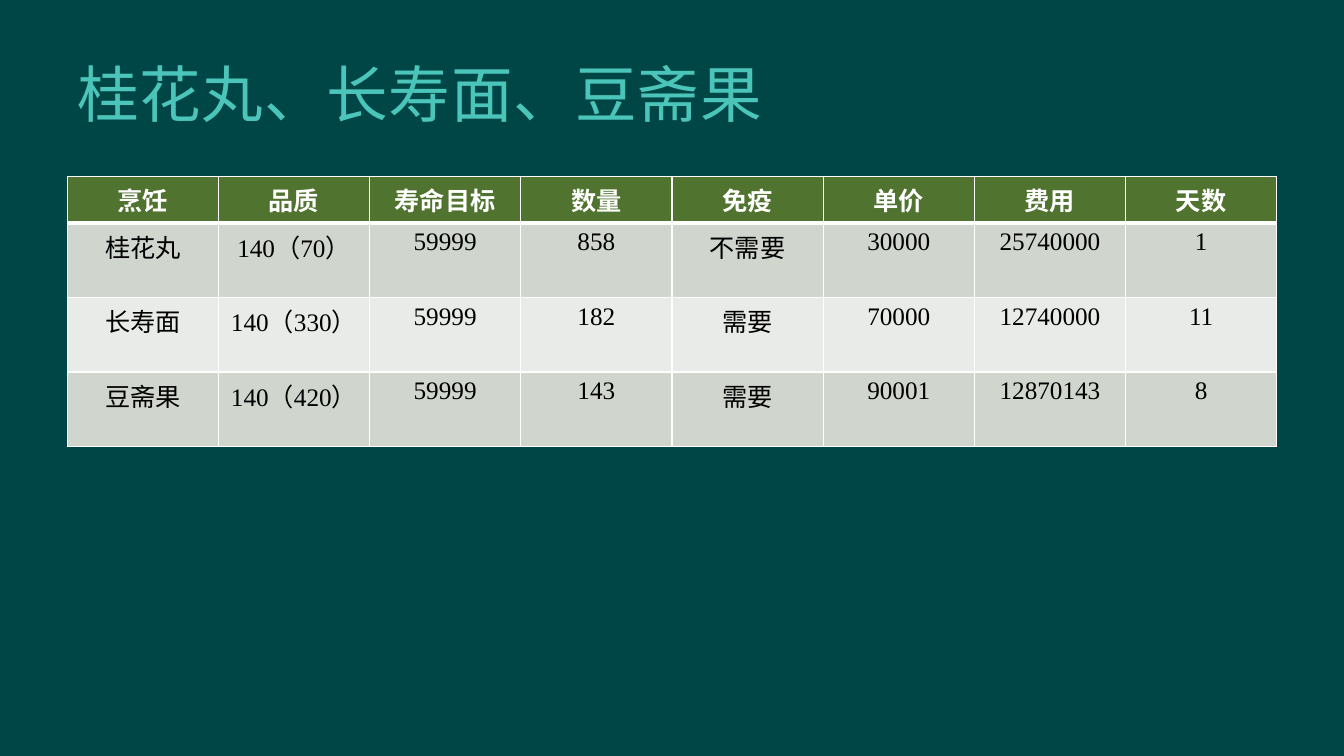
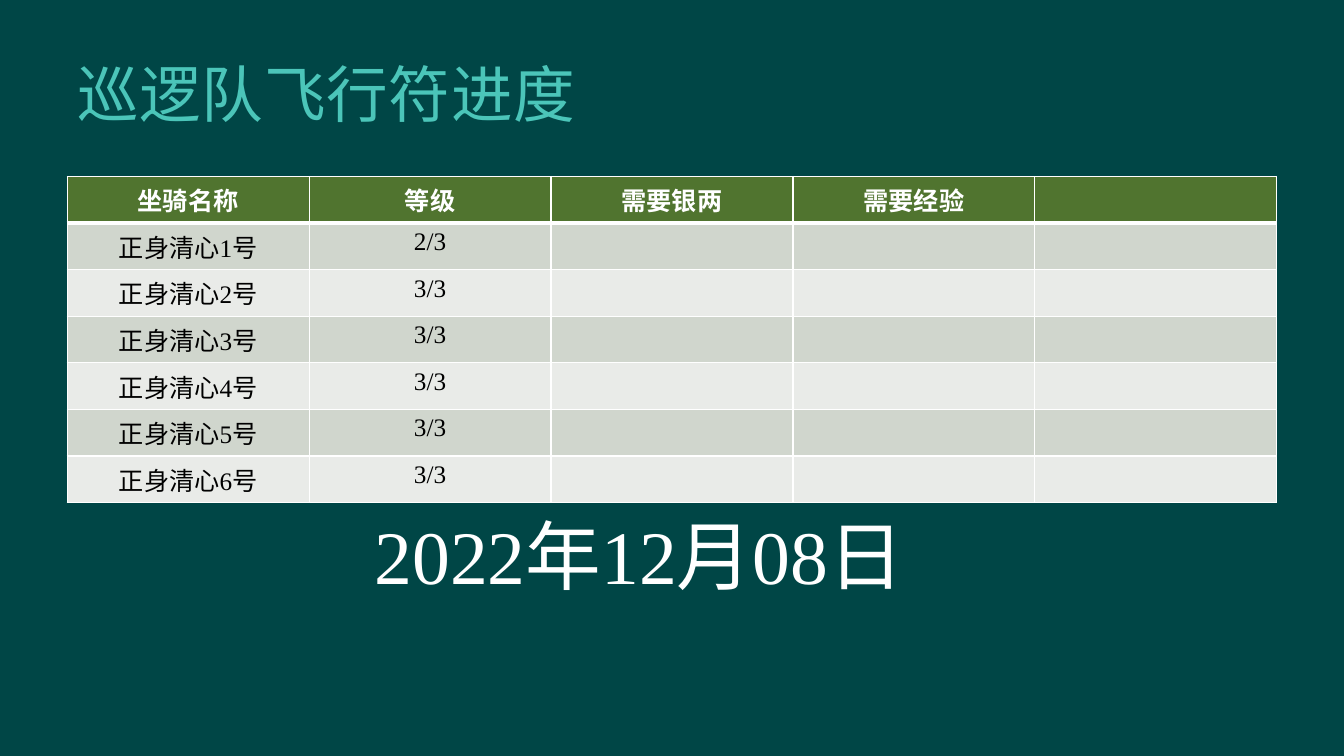
from lxml import etree
from pptx import Presentation
from pptx.dml.color import RGBColor
from pptx.enum import text
from pptx.oxml import ns
from pptx.util import Pt

BACKGROUND = "004646"
TITLE = "4BC5B9"
HEADER = "50742F"
BANDS = ["D0D6CD", "E9EBE8"]
WHITE = "FFFFFF"
BLACK = "000000"
LEFT = 48
TABLE_TOP = 126
TABLE_WIDTH = 864
ROW_HEIGHT = 29.2


def paint(target, color):
    if hasattr(target, "solid"):
        target.solid()
        target = target.fore_color
    target.rgb = RGBColor.from_string(color)


def add_border(cell, side, width):
    line = etree.Element(ns.qn(f"a:{side}"), w=str(Pt(width)))
    solid = etree.SubElement(line, ns.qn("a:solidFill"))
    etree.SubElement(solid, ns.qn("a:srgbClr"), val=WHITE)
    properties = cell._tc.get_or_add_tcPr()
    properties.insert(len(properties.findall("*")) - 1, line)


pages = [
    ("桂花丸、长寿面、豆斋果", [
        ["烹饪", "品质", "寿命目标", "数量", "免疫", "单价", "费用", "天数"],
        ["桂花丸", "140（70）", "59999", "858", "不需要", "30000", "25740000", "1"],
        ["长寿面", "140（330）", "59999", "182", "需要", "70000", "12740000", "11"],
        ["豆斋果", "140（420）", "59999", "143", "需要", "90001", "12870143", "8"],
    ]),
    ("巡逻队飞行符进度", [
        ["坐骑名称", "等级", "需要银两", "需要经验", ""],
        *[[f"正身清心{number}号", "2/3" if number == 1 else "3/3", "", "", ""]
          for number in range(1, 7)],
    ]),
]

presentation = Presentation()
presentation.slide_width = Pt(960)
presentation.slide_height = Pt(540)
paint(presentation.slide_master.background.fill, BACKGROUND)

for heading, rows in pages:
    slide = presentation.slides.add_slide(presentation.slide_layouts[5])
    title = slide.shapes.title
    title.left, title.top, title.width, title.height = Pt(LEFT), Pt(21.6), Pt(816.5), Pt(90)
    title.text_frame.text = heading
    title.text_frame.auto_size = text.MSO_AUTO_SIZE.NONE
    title.text_frame.vertical_anchor = text.MSO_ANCHOR.MIDDLE
    paragraph = title.text_frame.paragraphs[0]
    paragraph.alignment = text.PP_ALIGN.LEFT
    run = paragraph.runs[0]
    run.font.name = "Lato"
    run.font.size = Pt(44)
    paint(run.font.color, TITLE)
    run.font._element.set("spc", "50")

    table = slide.shapes.add_table(
        len(rows), len(rows[0]), Pt(LEFT), Pt(TABLE_TOP),
        Pt(TABLE_WIDTH), Pt(ROW_HEIGHT * len(rows))).table
    for row_index, row in enumerate(rows):
        is_header = row_index == 0
        for column_index, value in enumerate(row):
            cell = table.cell(row_index, column_index)
            paint(cell.fill, HEADER if is_header else BANDS[(row_index - 1) % 2])
            for side in ("lnL", "lnR", "lnT", "lnB"):
                thick = (side == "lnB" and is_header) or (side == "lnT" and row_index == 1)
                add_border(cell, side, 3 if thick else 1)
            cell.text_frame.text = value
            paragraph = cell.text_frame.paragraphs[0]
            paragraph.alignment = text.PP_ALIGN.CENTER
            for run in paragraph.runs:
                run.font.name = "Times New Roman"
                run.font.size = Pt(18)
                run.font.bold = is_header
                paint(run.font.color, WHITE if is_header else BLACK)

date_box = slide.shapes.add_textbox(Pt(260), Pt(360), Pt(393), Pt(72.7))
date_box.text_frame.word_wrap = True
date_box.text_frame.text = "2022年12月08日"
paragraph = date_box.text_frame.paragraphs[0]
paragraph.alignment = text.PP_ALIGN.CENTER
run = paragraph.runs[0]
run.font.name = "Times New Roman"
run.font.size = Pt(54)
paint(run.font.color, WHITE)

presentation.save("out.pptx")
